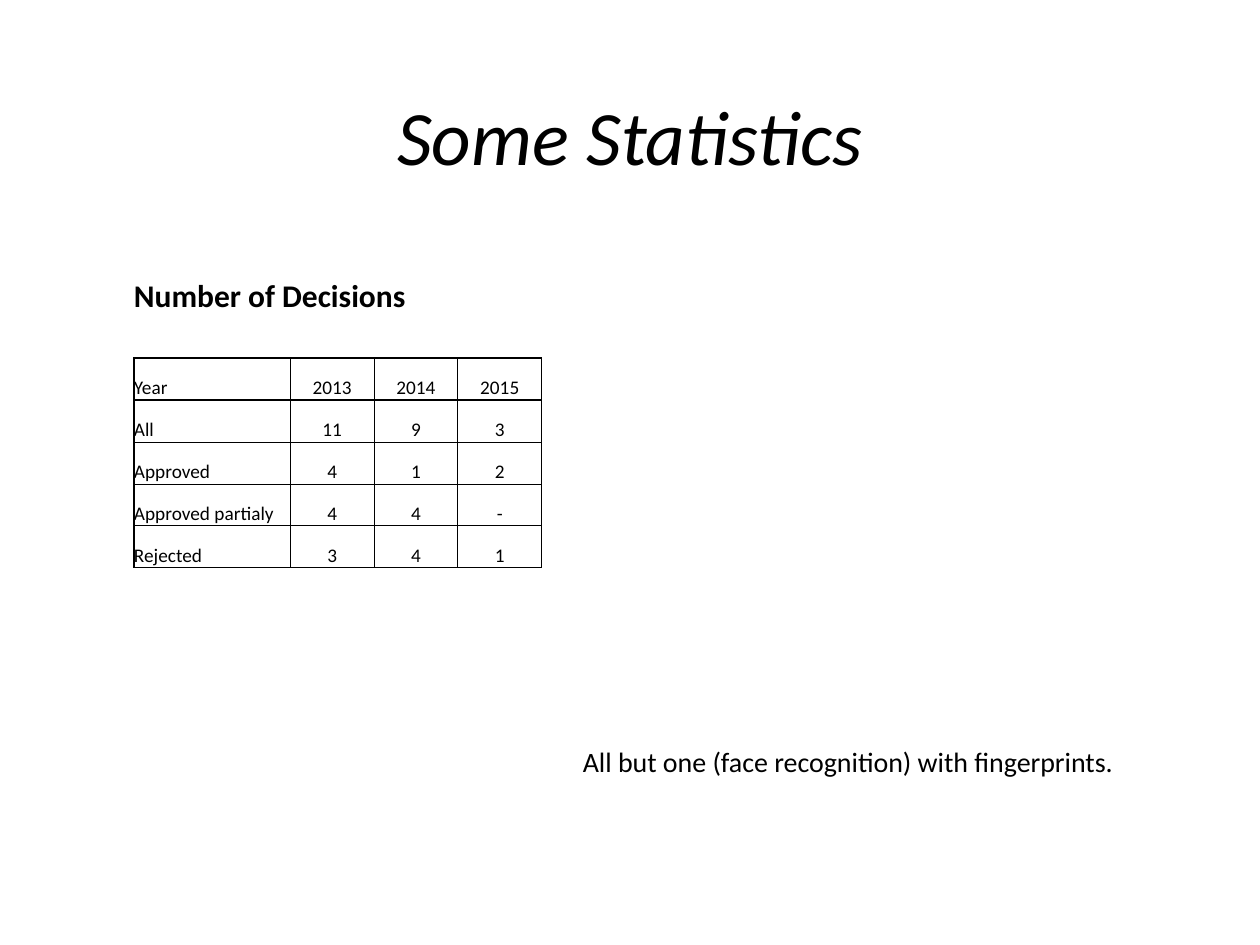
"""Build the statistics slide with its table of decisions."""

from dataclasses import dataclass

from lxml.etree import SubElement
from pptx import Presentation
from pptx.dml.color import RGBColor
from pptx.enum.text import MSO_ANCHOR, PP_ALIGN
from pptx.oxml.ns import qn
from pptx.util import Cm, Pt

INK = "000000"
FONT = "Calibri"
NO_STYLE = "{2D5ABB26-0587-4C30-8999-92F81FD0307C}"
HEADING_ROW, GAP_ROW, YEAR_ROW = 0, 1, 2
COLUMN_WIDTHS = (3.15, 1.69, 1.69, 1.69)
ROW_HEIGHT = 0.845


@dataclass(frozen=True)
class Record:
    label: str
    values: tuple[str, ...]


RECORDS = (
    Record("Year", ("2013", "2014", "2015")),
    Record("All", ("11", "9", "3")),
    Record("Approved", ("4", "1", "2")),
    Record("Approved partialy", ("4", "4", "-")),
    Record("Rejected", ("3", "4", "1")),
)


def color(value: str) -> RGBColor:
    return RGBColor.from_string(value)


def style(para, size: float, align=PP_ALIGN.LEFT, bold=False, italic=False) -> None:
    para.alignment = align
    font = para.font
    font.name, font.size = FONT, Pt(size)
    font.bold, font.italic = bold, italic
    font.color.rgb = color(INK)


def add_border(cell, side: str, width: float) -> None:
    properties = cell._tc.get_or_add_tcPr()
    line = SubElement(properties, qn(f"a:ln{side}"), w=str(Pt(width)))
    fill = SubElement(line, qn("a:solidFill"))
    SubElement(fill, qn("a:srgbClr"), val=INK)


def fill_cell(cell, text: str, size: float, align=PP_ALIGN.LEFT, bold=False) -> None:
    cell.margin_left = cell.margin_right = cell.margin_top = cell.margin_bottom = 0
    cell.vertical_anchor = MSO_ANCHOR.BOTTOM
    cell.fill.background()
    cell.text = text
    style(cell.text_frame.paragraphs[0], size, align, bold)


def add_title(page) -> None:
    title = page.shapes.title
    title.left, title.top, title.width, title.height = Cm(0.5), Cm(1.52), Cm(24.4), Cm(2.4)
    title.text_frame.vertical_anchor = MSO_ANCHOR.MIDDLE
    title.text_frame.text = "Some Statistics"
    style(title.text_frame.paragraphs[0], 44, PP_ALIGN.CENTER, italic=True)


def add_note(page) -> None:
    box = page.shapes.add_textbox(Cm(11.5), Cm(14.68), Cm(13.9), Cm(1.78))
    box.text_frame.word_wrap = True
    para = box.text_frame.paragraphs[0]
    para.text = "All but one (face recognition) with fingerprints."
    para.line_spacing = 1.3
    style(para, 16)


def add_decisions(page) -> None:
    row_count, column_count = YEAR_ROW + len(RECORDS), len(COLUMN_WIDTHS)
    table = page.shapes.add_table(
        row_count, column_count, Cm(2.7), Cm(5.53),
        Cm(sum(COLUMN_WIDTHS)), Cm(ROW_HEIGHT * row_count),
    ).table
    table.first_row = table.horz_banding = False
    table._tbl.tblPr.find(qn("a:tableStyleId")).text = NO_STYLE
    for column, width in zip(table.columns, COLUMN_WIDTHS):
        column.width = Cm(width)
    for row in table.rows:
        row.height = Cm(ROW_HEIGHT)

    for column in range(column_count):
        add_border(table.cell(GAP_ROW, column), "B", 1)
        for row in (HEADING_ROW, GAP_ROW):
            fill_cell(table.cell(row, column), "", 11)
    heading = table.cell(HEADING_ROW, 0)
    heading.merge(table.cell(HEADING_ROW, 2))
    fill_cell(heading, "Number of Decisions", 18, bold=True)

    for row, record in enumerate(RECORDS, YEAR_ROW):
        for column, text in enumerate((record.label, *record.values)):
            cell = table.cell(row, column)
            heavy_sides = {
                "L": column == 0,
                "R": column == column_count - 1,
                "T": row <= YEAR_ROW + 1,
                "B": row in (YEAR_ROW, row_count - 1),
            }
            for side, heavy in heavy_sides.items():
                add_border(cell, side, 1 if heavy else 0.5)
            fill_cell(cell, text, 11, PP_ALIGN.CENTER if column else PP_ALIGN.LEFT)


def main() -> None:
    deck = Presentation()
    deck.slide_width, deck.slide_height = Cm(25.4), Cm(19.05)
    page = deck.slides.add_slide(deck.slide_layouts[5])
    add_title(page)
    add_note(page)
    add_decisions(page)
    deck.save("out.pptx")


if __name__ == "__main__":
    main()
